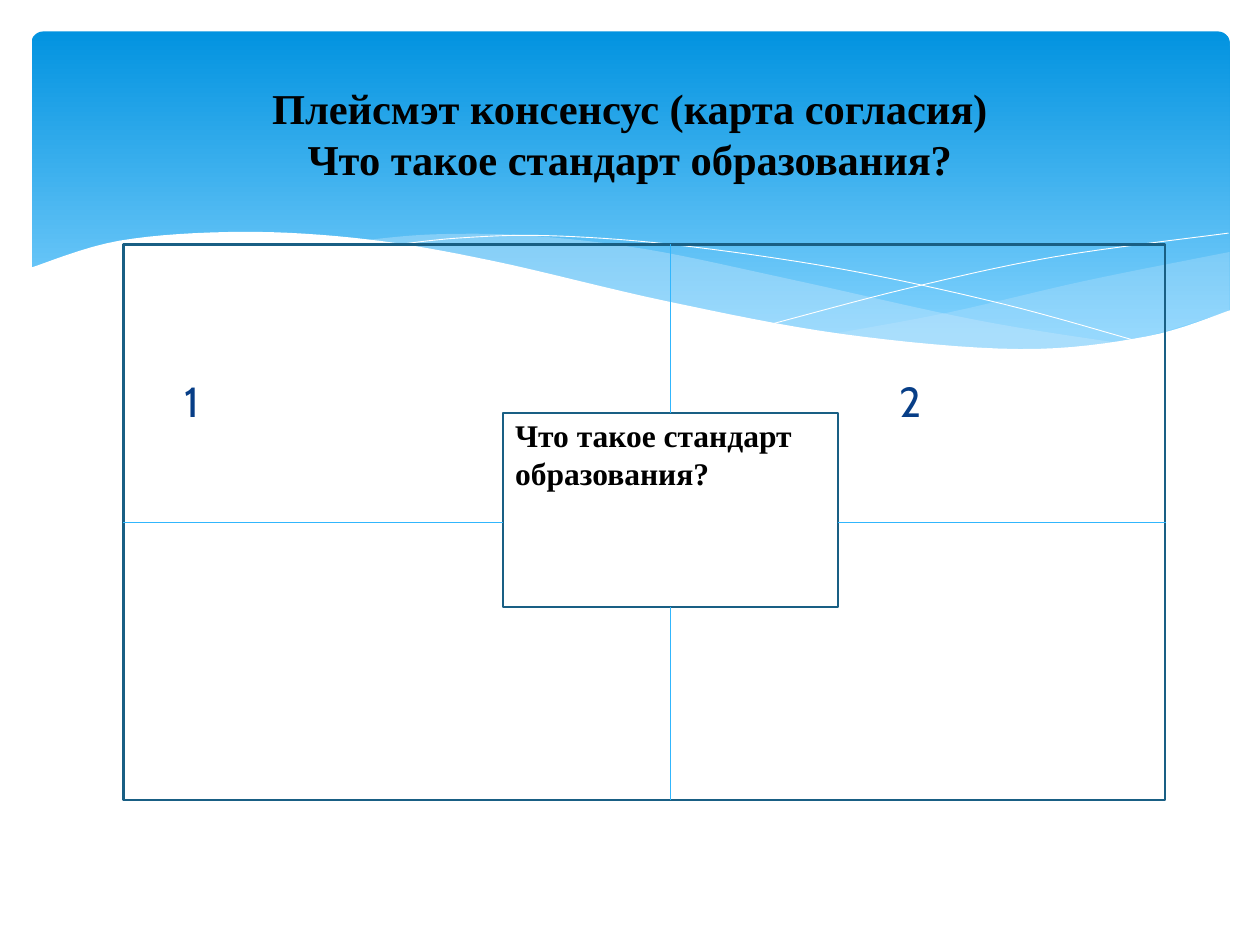
from lxml import etree
from pptx import Presentation
from pptx.dml.color import RGBColor
from pptx.enum.shapes import MSO_CONNECTOR, MSO_SHAPE
from pptx.enum.text import MSO_ANCHOR, PP_ALIGN
from pptx.oxml.ns import qn
from pptx.util import Inches, Pt

LINE, RECT, ROUND = MSO_CONNECTOR.STRAIGHT, MSO_SHAPE.RECTANGLE, MSO_SHAPE.ROUNDED_RECTANGLE
MIDDLE, TOP = MSO_ANCHOR.MIDDLE, MSO_ANCHOR.TOP
CENTER, LEFT = PP_ALIGN.CENTER, PP_ALIGN.LEFT
UP, WEST, DOWN, EAST = range(4)

# Content
TITLE = "Плейсмэт консенсус (карта согласия)\vЧто такое стандарт образования?"
TOPIC = "Что такое стандарт образования?"
LABELS = [("1", 1.37), ("2", 7.04)]

# Theme
THEME = {
    "sky": [(0, "0293E0"), (0.9, "83D3FE")],
    "mist": "C6E7FC", "white": "FFFFFF", "frame": "195F84", "rule": "31B6FD",
    "title": {"name": "Times New Roman", "size": 24.3, "color": "000000", "bold": True},
    "topic": {"name": "Times New Roman", "size": 18, "color": "000000", "bold": True},
    "label": {"name": "Cabin", "size": 24, "color": "073E87", "bold": False},
}

# Boxes: left, top, width, height
BANNER = (0.25, 0.25, 9.51, 2.7)
HEAD = (0.5, 0.37, 9, 1.37)
OUTER = (0.98, 1.94, 8.27, 4.41)
INNER = (3.99, 3.28, 2.66, 1.54)
NOTE = (3.99, 3.25, 2.66, 1.01)

# Waves: fill, opacity in percent, outline width, smooth curves through knots
WAVES = [
    ("mist", 29, 0, [
        [(9.76, 2), (8.61, 2.23), (7.53, 2.48), (6.61, 2.65)],
        [(6.61, 2.65), (7.45, 2.75), (8.24, 2.77), (8.97, 2.7), (9.76, 2.47)]]),
    ("mist", 40, 0, [
        [(8.93, 2.73), (7.75, 2.54), (6.29, 2.22), (5.14, 1.98), (4.2, 1.87),
         (3.44, 1.86), (2.86, 1.91)],
        [(2.86, 1.91), (4.49, 2.22), (5.66, 2.48), (6.8, 2.68), (7.85, 2.78),
         (8.93, 2.73)]]),
    (None, 100, 0.5, [
        [(3.09, 1.95), (3.63, 1.89), (4.33, 1.87), (5.33, 1.94), (6.65, 2.13),
         (7.95, 2.41), (9.07, 2.72)]]),
    (None, 100, 0.5, [
        [(6.13, 2.57), (7.2, 2.29), (8.36, 2.04), (9.75, 1.85)]]),
    ("white", 100, 0, [
        [(9.77, 2.46), (9.1, 2.67), (8.09, 2.77), (6.68, 2.65), (5.29, 2.39),
         (3.91, 2.07), (2.92, 1.9), (1.93, 1.84), (0.95, 1.91), (0.23, 2.13)],
        [(0.23, 3.29)], [(9.77, 3.29)]]),
]
STEPS = 8


def rgb(key):
    return RGBColor.from_string(THEME.get(key, key))


def inches(nums):
    return [Inches(n) for n in nums]


def smooth(knots):
    """Points of a Catmull-Rom curve through the knots."""
    ring = [knots[0], *knots, knots[-1]]
    points = [knots[0]]
    for quad in zip(ring, ring[1:], ring[2:], ring[3:]):
        for step in range(1, STEPS + 1):
            t = step / STEPS
            points.append([
                b + t * ((c - a) + t * ((2 * a - 5 * b + 4 * c - d)
                                        + t * (3 * b - a - 3 * c + d))) / 2
                for a, b, c, d in zip(*quad)])
    return points


def stroke(shape, key, width):
    if width:
        shape.line.color.rgb = rgb(key)
        shape.line.width = Pt(width)
    else:
        shape.line.fill.background()


def write(shape, text, style, align=LEFT, anchor=TOP, before=0):
    frame = shape.text_frame
    frame.text, frame.word_wrap, frame.vertical_anchor = text, True, anchor
    para = frame.paragraphs[0]
    para.alignment, para.space_before = align, Pt(before)
    for run in para.runs:
        form = dict(THEME[style])
        run.font.color.rgb = rgb(form.pop("color"))
        form["size"] = Pt(form["size"])
        for key, value in form.items():
            setattr(run.font, key, value)


def add_wave(shapes, fill, alpha, width, curves):
    first, *rest = [inches(p) for knots in curves for p in smooth(knots)]
    pen = shapes.build_freeform(*first)
    pen.add_line_segments(rest, close=fill is not None)
    wave = pen.convert_to_shape()
    wave.shadow.inherit = False
    stroke(wave, "white", width)
    if fill is None:
        wave.fill.background()
        return
    wave.fill.solid()
    wave.fill.fore_color.rgb = rgb(fill)
    if alpha < 100:
        color = wave._element.spPr.find(qn("a:solidFill") + "/" + qn("a:srgbClr"))
        etree.SubElement(color, qn("a:alpha"), val=str(alpha * 1000))


def add_box(shapes, box):
    rect = shapes.add_shape(RECT, *inches(box))
    rect.shadow.inherit = False
    rect.fill.background()
    stroke(rect, "frame", 1.25)
    return rect


def add_rule(shapes, start, end):
    rule = shapes.add_connector(LINE, *inches(start + end))
    stroke(rule, "rule", 0.75)
    etree.SubElement(rule._element.spPr, qn("a:effectLst"))
    return rule


def main():
    deck = Presentation()
    deck.slide_width, deck.slide_height = Inches(10), Inches(7.5)
    slide = deck.slides.add_slide(deck.slide_layouts[5])
    shapes = slide.shapes

    # Banner with waves
    banner = shapes.add_shape(ROUND, *inches(BANNER))
    banner.adjustments[0] = 0.034
    banner.shadow.inherit = False
    stroke(banner, None, 0)
    banner.fill.gradient()
    banner.fill.gradient_angle = 270
    for stop, (place, color) in zip(banner.fill.gradient_stops, THEME["sky"]):
        stop.position, stop.color.rgb = place, rgb(color)
    for wave in WAVES:
        add_wave(shapes, *wave)

    # Title, brought in front of the banner
    title = shapes.title
    title.left, title.top, title.width, title.height = inches(HEAD)
    write(title, TITLE, "title", CENTER, MIDDLE)
    banner._element.getparent().append(title._element)

    # Quadrant numbers
    for text, left in LABELS:
        label = shapes.add_textbox(*inches((left, 2.93, 0.6, 0.55)))
        write(label, text, "label", before=4.8)

    # Frames and the rules between them
    outer, inner = add_box(shapes, OUTER), add_box(shapes, INNER)
    left, top, width, height = OUTER
    x, y, wide, high = INNER
    midx, midy = x + wide / 2, top + height / 2
    for start, end, side in [((left, midy), (x, midy), WEST),
                             ((left + width, midy), (x + wide, midy), EAST)]:
        add_rule(shapes, start, end).begin_connect(outer, side)
    for start, end, side in [((midx, top + height), (midx, y + high), DOWN),
                             ((midx, top), (midx, y), UP)]:
        add_rule(shapes, start, end).end_connect(inner, side)

    # Central question
    write(shapes.add_textbox(*inches(NOTE)), TOPIC, "topic")

    deck.save("out.pptx")


if __name__ == "__main__":
    main()
